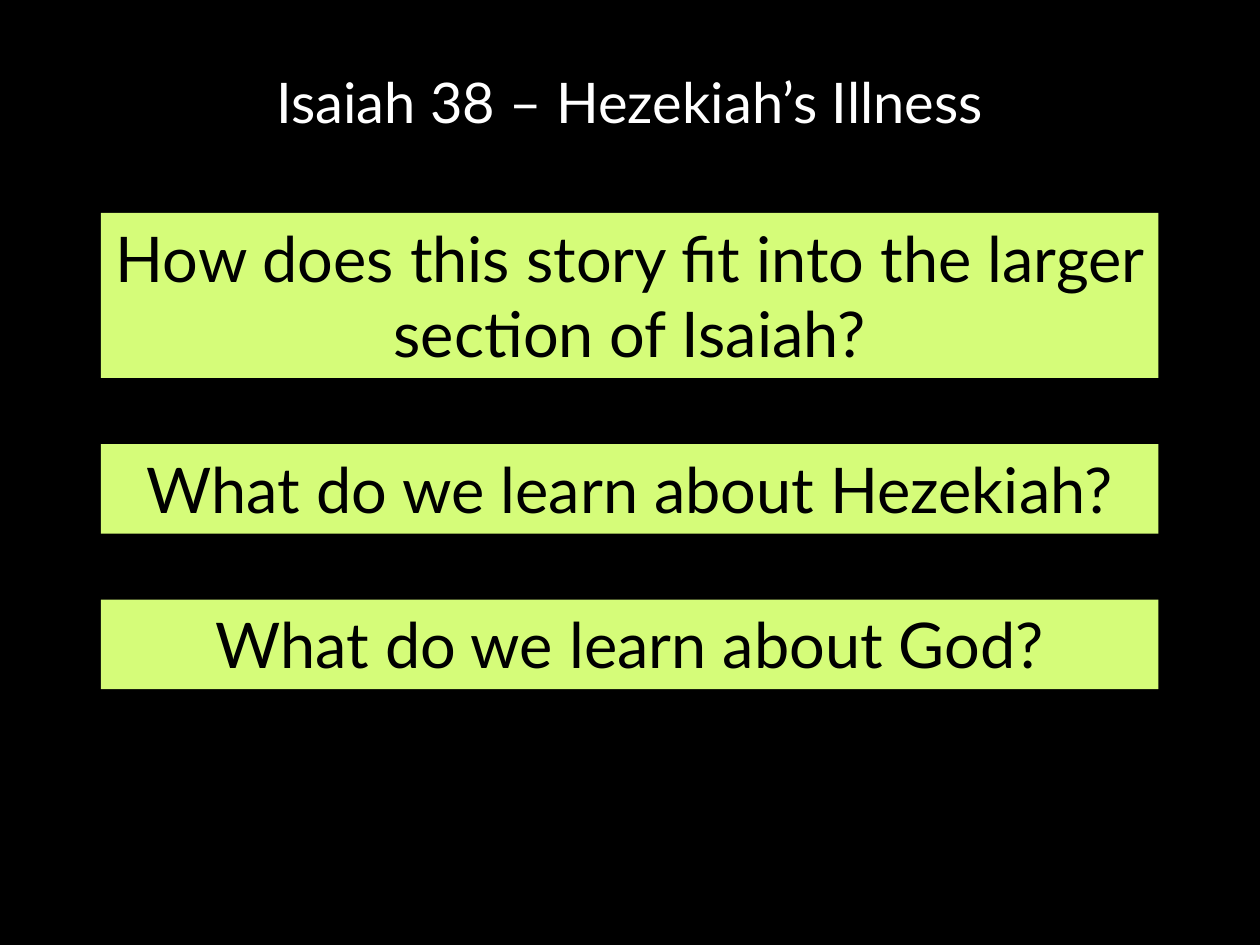
from pptx import Presentation
from pptx.dml.color import RGBColor
from pptx.enum import shapes, text
from pptx.util import Pt

# Content: each question with its number of lines
TITLE = "Isaiah 38 – Hezekiah’s Illness"
ASKS = [
    ("How does this story fit into the larger section of Isaiah?", 2),
    ("What do we learn about Hezekiah?", 1),
    ("What do we learn about God?", 1),
]

THEME = {
    "font": "Lato",
    "back": RGBColor(0, 0, 0),
    "band": RGBColor(0xD5, 0xFC, 0x79),
    "title": {"size": Pt(32), "color": RGBColor(255, 255, 255)},
    "ask": {"size": Pt(36), "color": RGBColor(0, 0, 0)},
}

# Layout in points
HEAD = (49.7, 39.6, 620.6, 104.4)
LEFT, TOP, WIDE, GAP = 57.7, 121.7, 604.3, 37.8
PAD, LINE = 7.9, 43.2


def write(shape, words, style, anchor, fit, space=None):
    frame = shape.text_frame
    para = frame.paragraphs[0]
    run = para.add_run()
    run.text = words
    run.font.color.rgb = style["color"]
    formats = [
        (frame, {"word_wrap": True, "vertical_anchor": anchor, "auto_size": fit}),
        (para, {"alignment": text.PP_ALIGN.CENTER, "line_spacing": space}),
        (run.font, {"name": THEME["font"], "size": style["size"]}),
    ]
    for part, values in formats:
        for key, value in values.items():
            setattr(part, key, value)


def main():
    deck = Presentation()
    deck.slide_width, deck.slide_height = Pt(720), Pt(540)
    slide = deck.slides.add_slide(deck.slide_layouts[6])
    fill = slide.background.fill
    fill.solid()
    fill.fore_color.rgb = THEME["back"]

    # Title
    head = slide.shapes.add_textbox(*map(Pt, HEAD))
    write(head, TITLE, THEME["title"], text.MSO_ANCHOR.TOP,
          text.MSO_AUTO_SIZE.NONE, 0.9)

    # Question bands, stacked with equal gaps
    top = TOP
    for words, lines in ASKS:
        high = PAD + lines * LINE
        band = slide.shapes.add_shape(
            shapes.MSO_SHAPE.RECTANGLE, Pt(LEFT), Pt(top), Pt(WIDE), Pt(high))
        band.shadow.inherit = False
        band.fill.solid()
        band.fill.fore_color.rgb = THEME["band"]
        band.line.fill.background()
        write(band, words, THEME["ask"], text.MSO_ANCHOR.TOP,
              text.MSO_AUTO_SIZE.SHAPE_TO_FIT_TEXT)
        top += high + GAP

    deck.save("out.pptx")


if __name__ == "__main__":
    main()
